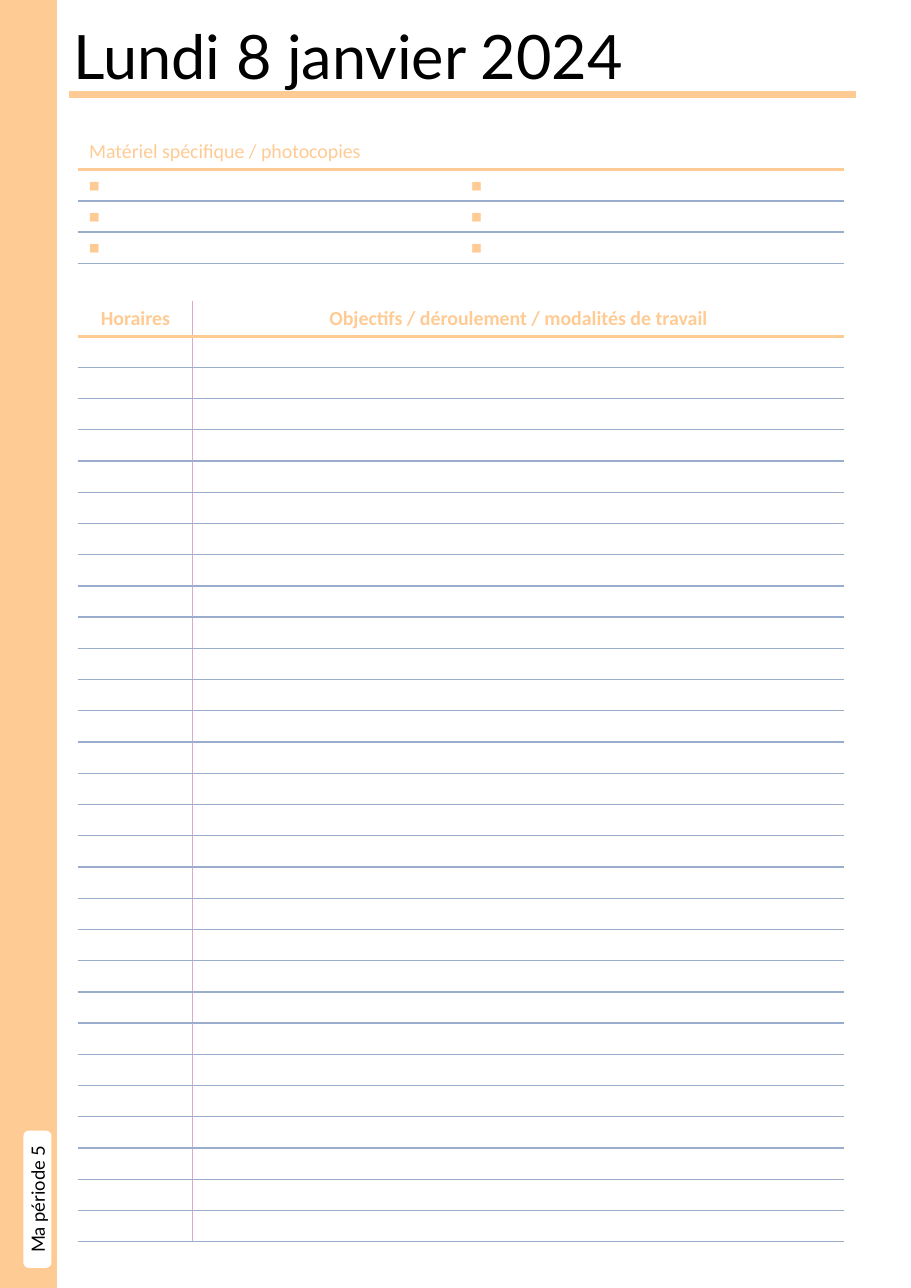
from lxml.etree import SubElement
from pptx import Presentation
from pptx.dml.color import RGBColor
from pptx.enum.shapes import MSO_CONNECTOR, MSO_SHAPE
from pptx.enum.text import MSO_ANCHOR, PP_ALIGN
from pptx.oxml import parse_xml
from pptx.oxml.ns import nsdecls, qn
from pptx.util import Inches, Pt

PEACH = "FFCB94"
RULE_BLUE = "9AADCD"
PINK = "DCA9CC"
WHITE = "FFFFFF"
BLACK = "000000"

TABLE_LEFT = 0.71
SCHEDULE_ROWS = 29
RULED_HEIGHT = 8.23 / SCHEDULE_ROWS
SQUARE = "◼︎"


def color(value):
    """Turn a hex string into a colour."""
    return RGBColor.from_string(value)


def write(paragraph, text, size, font, text_color, bold=False, align=PP_ALIGN.LEFT):
    """Put formatted text in a paragraph."""
    paragraph.text = text
    paragraph.alignment = align
    paragraph.font.size = Pt(size)
    paragraph.font.name = font
    paragraph.font.bold = bold
    paragraph.font.color.rgb = color(text_color)


def add_title(slide, text):
    """Add the date at the top of the page."""
    box = slide.shapes.add_textbox(Inches(0.57), Inches(0.12), Inches(7.32), Inches(0.77))
    box.text_frame.word_wrap = True
    write(box.text_frame.paragraphs[0], text, 40, "Lato", BLACK)


def add_underline(slide):
    """Draw the thick line below the date."""
    line = slide.shapes.add_connector(
        MSO_CONNECTOR.STRAIGHT, Inches(0.63), Inches(0.86), Inches(7.77), Inches(0.86))
    line.line.color.rgb = color(PEACH)
    line.line.width = Pt(4.75)
    SubElement(line._element.spPr, qn("a:effectLst"))


def set_borders(cell, borders):
    """Set cell borders from a mapping of side to colour and width."""
    properties = cell._tc.get_or_add_tcPr()
    sides = [side for side in "LRTB" if side in borders]
    for position, side in enumerate(sides):
        line_color, width = borders[side]
        properties.insert(position, parse_xml(
            f'<a:ln{side} {nsdecls("a")} w="{Pt(width)}"><a:solidFill>'
            f'<a:srgbClr val="{line_color}"/></a:solidFill></a:ln{side}>'))


def add_ruled_table(slide, top, widths, header_height, ruled_rows, divider):
    """Add a table with a header row above evenly ruled rows."""
    height = header_height + ruled_rows * RULED_HEIGHT
    table = slide.shapes.add_table(
        ruled_rows + 1, len(widths), Inches(TABLE_LEFT), Inches(top),
        Inches(sum(widths)), Inches(height)).table
    table.first_row = table.horz_banding = False
    for column, width in zip(table.columns, widths):
        column.width = Inches(width)
    rules = [(WHITE, 1), (PEACH, 2.25)] + [(RULE_BLUE, 1)] * ruled_rows
    for row_index, row in enumerate(table.rows):
        row.height = Inches(RULED_HEIGHT if row_index else header_height)
        for column_index, cell in enumerate(row.cells):
            cell.fill.solid()
            cell.fill.fore_color.rgb = color(WHITE)
            cell.vertical_anchor = MSO_ANCHOR.MIDDLE
            cell.margin_top = cell.margin_bottom = Inches(0.02)
            set_borders(cell, {
                "L": (divider if column_index else WHITE, 1),
                "R": (WHITE if column_index else divider, 1),
                "T": rules[row_index],
                "B": rules[row_index + 1]})
            paragraph = cell.text_frame.paragraphs[0]
            SubElement(paragraph._p, qn("a:endParaRPr"), sz="1100")
    return table


def add_materials(slide):
    """Add the two-column checklist of materials."""
    table = add_ruled_table(slide, 1.22, [3.47, 3.48], 0.32, 3, WHITE)
    write(table.cell(0, 0).text_frame.paragraphs[0],
          "Matériel spécifique / photocopies", 13, "Calibri", PEACH)
    for row in range(1, 4):
        for column in range(2):
            write(table.cell(row, column).text_frame.paragraphs[0],
                  SQUARE, 11, "Calibri", PEACH)


def add_schedule(slide):
    """Add the ruled timetable of the day."""
    table = add_ruled_table(slide, 2.74, [1.04, 5.91], 0.31, SCHEDULE_ROWS, PINK)
    headings = ["Horaires", "Objectifs / déroulement / modalités de travail"]
    for column, heading in enumerate(headings):
        write(table.cell(0, column).text_frame.paragraphs[0],
              heading, 13, "Calibri", PEACH, True, PP_ALIGN.CENTER)


def add_block(slide, kind, left, top, width, height, block_color):
    """Add a shape in one plain colour."""
    shape = slide.shapes.add_shape(
        kind, Inches(left), Inches(top), Inches(width), Inches(height))
    shape.shadow.inherit = False
    shape.fill.solid()
    shape.fill.fore_color.rgb = color(block_color)
    shape.line.color.rgb = color(block_color)
    shape.line.width = Pt(1)
    return shape


def add_period_tab(slide, text):
    """Add the label that reads upwards on the side band."""
    tab = add_block(slide, MSO_SHAPE.ROUNDED_RECTANGLE, 0.22, 10.27, 0.24, 1.23, WHITE)
    frame = tab.text_frame
    frame.margin_left = frame.margin_right = frame.margin_top = frame.margin_bottom = 0
    frame.vertical_anchor = MSO_ANCHOR.MIDDLE
    frame._txBody.bodyPr.set("vert", "vert270")
    write(frame.paragraphs[0], text, 12, "Lato", BLACK, align=PP_ALIGN.CENTER)


def main():
    """Build the daily planner page."""
    presentation = Presentation()
    presentation.slide_width = Inches(8.27)
    presentation.slide_height = Inches(11.69)
    slide = presentation.slides.add_slide(presentation.slide_layouts[6])
    add_title(slide, "Lundi 8 janvier 2024")
    add_underline(slide)
    add_materials(slide)
    add_schedule(slide)
    add_block(slide, MSO_SHAPE.RECTANGLE, 0, 0, 0.51, 11.69, PEACH)
    add_period_tab(slide, "Ma période 5")
    presentation.save("out.pptx")


if __name__ == "__main__":
    main()
